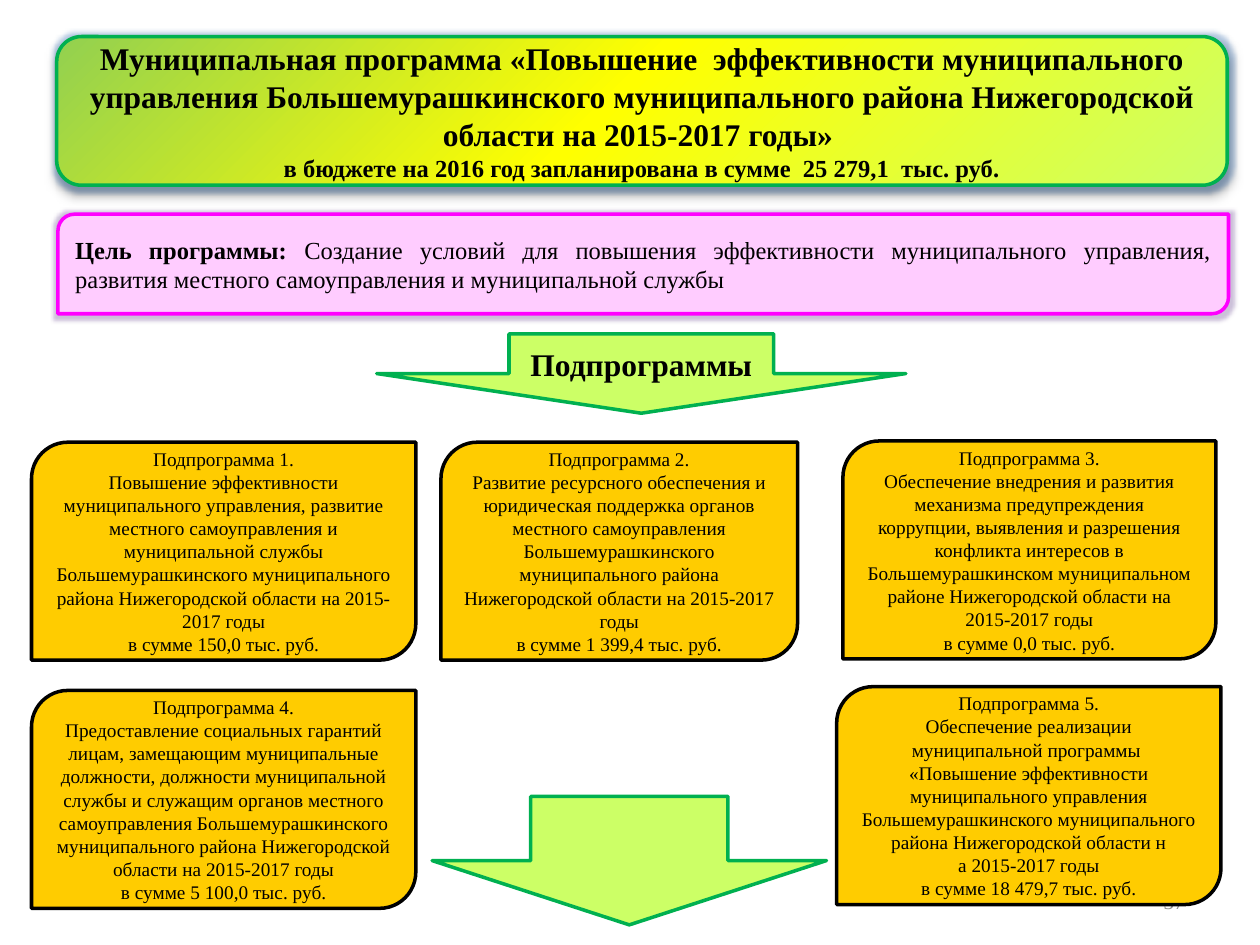
import copy
from dataclasses import dataclass

import pptx
import pptx.dml.color
import pptx.enum.shapes
import pptx.enum.text
import pptx.oxml
import pptx.oxml.ns
import pptx.util

Inches = pptx.util.Inches
Pt = pptx.util.Pt
Shape = pptx.enum.shapes.MSO_SHAPE
Align = pptx.enum.text.PP_ALIGN


@dataclass(frozen=True)
class Theme:
    font: str = "Times New Roman"
    ink: str = "000000"
    muted: str = "8C8C8C"
    green: str = "00B050"
    lime: str = "CCFF66"
    pink: str = "FFCCFF"
    magenta: str = "FF00FF"
    amber: str = "FFCC00"
    title_stops: tuple = (("CCFF66", 0), ("FFFF00", 0.53), ("92D050", 1))
    title_glow: str = "4F81BD"
    goal_glow: str = "8064A2"
    heading_size: int = 18
    body_size: int = 14
    number_size: int = 12
    card_size: int = 11
    border: int = 2


THEME = Theme()

SUBPROGRAMS = [
    ((0.25, 3.51, 3.05, 1.73), [
        "Подпрограмма 1.",
        "Повышение эффективности муниципального управления, развитие местного самоуправления и "
        "муниципальной службы Большемурашкинского муниципального района Нижегородской области "
        "на 2015-2017 годы",
        "в сумме 150,0 тыс. руб."]),
    ((3.5, 3.51, 2.83, 1.73), [
        "Подпрограмма 2.",
        "Развитие ресурсного обеспечения и юридическая поддержка органов местного самоуправления "
        "Большемурашкинского муниципального района Нижегородской области на 2015-2017 годы",
        "в сумме 1 399,4 тыс. руб."]),
    ((6.69, 3.5, 2.96, 1.73), [
        "Подпрограмма 3.",
        "Обеспечение внедрения и развития механизма предупреждения коррупции, выявления и "
        "разрешения конфликта интересов в Большемурашкинском муниципальном районе "
        "Нижегородской области на 2015-2017 годы",
        "в сумме 0,0 тыс. руб."]),
    ((0.25, 5.48, 3.05, 1.73), [
        "Подпрограмма 4.",
        "Предоставление социальных гарантий лицам, замещающим муниципальные должности, должности "
        "муниципальной службы и служащим органов местного самоуправления Большемурашкинского "
        "муниципального района Нижегородской области на 2015-2017 годы",
        "в сумме 5 100,0 тыс. руб."]),
    ((6.64, 5.45, 3.05, 1.73), [
        "Подпрограмма 5.",
        "Обеспечение реализации муниципальной программы  «Повышение эффективности муниципального "
        "управления Большемурашкинского муниципального района Нижегородской области н",
        "а 2015-2017 годы",
        "в сумме 18 479,7 тыс. руб."]),
]


def rgb(color):
    return pptx.dml.color.RGBColor.from_string(color)


def inches(box):
    return [Inches(length) for length in box]


def add_panel(slide, box, preset, fill, line):
    panel = slide.shapes.add_shape(preset, *inches(box))
    panel.shadow.inherit = False
    panel.fill.solid()
    panel.fill.fore_color.rgb = rgb(fill)
    panel.line.color.rgb = rgb(line)
    panel.line.width = Pt(THEME.border)
    return panel


def add_effect(panel, tag, color, alpha, **attributes):
    settings = " ".join(f'{key}="{value}"' for key, value in attributes.items())
    effect = pptx.oxml.parse_xml(
        f'<a:{tag} {pptx.oxml.ns.nsdecls("a")} {settings}>'
        f'<a:srgbClr val="{color}"><a:alpha val="{alpha * 1000}"/></a:srgbClr></a:{tag}>')
    panel._element.spPr.find(pptx.oxml.ns.qn("a:effectLst")).append(effect)


def write(shape, paragraphs, align=Align.CENTER, color=THEME.ink):
    frame = shape.text_frame
    frame.word_wrap = True
    frame.vertical_anchor = pptx.enum.text.MSO_ANCHOR.MIDDLE
    for index, (text, size, bold) in enumerate(paragraphs):
        paragraph = frame.add_paragraph() if index else frame.paragraphs[0]
        paragraph.text = text
        paragraph.alignment = align
        paragraph.font.name = THEME.font
        paragraph.font.size = Pt(size)
        paragraph.font.bold = bold
        paragraph.font.color.rgb = rgb(color)
    return frame


def add_page_number(slide, box):
    number = slide.shapes.add_textbox(*inches(box))
    write(number, [("37", THEME.number_size, False)], Align.RIGHT, THEME.muted)


def add_title(slide, box):
    title = add_panel(slide, box, Shape.ROUNDED_RECTANGLE, THEME.lime, THEME.green)
    title.fill.gradient()
    title.fill.gradient_angle = 135
    stop_list = next(title._element.spPr.iter(pptx.oxml.ns.qn("a:gsLst")))
    stop_list.append(copy.deepcopy(stop_list[0]))
    for stop, (color, position) in zip(title.fill.gradient_stops, THEME.title_stops):
        stop.color.rgb = rgb(color)
        stop.position = position
    add_effect(title, "glow", THEME.title_glow, 40, rad=Pt(5))
    add_effect(title, "outerShdw", THEME.ink, 40, blurRad=Pt(4), dist=Pt(3), dir=5400000)
    write(title, [
        ("Муниципальная программа «Повышение  эффективности муниципального управления "
         "Большемурашкинского муниципального района Нижегородской области на 2015-2017 годы» ",
         THEME.heading_size, True),
        ("в бюджете на 2016 год запланирована в сумме  25 279,1  тыс. руб.",
         THEME.body_size, True)])


def add_goal(slide, box):
    goal = add_panel(slide, box, Shape.ROUND_2_DIAG_RECTANGLE, THEME.pink, THEME.magenta)
    add_effect(goal, "glow", THEME.goal_glow, 40, rad=Pt(5))
    frame = write(goal, [("", THEME.body_size, False)], Align.JUSTIFY)
    label = frame.paragraphs[0].add_run()
    label.text = "Цель программы: "
    label.font.bold = True
    frame.paragraphs[0].add_run().text = (
        "Создание условий для повышения эффективности муниципального управления, "
        "развития местного самоуправления и муниципальной службы")


def add_arrow(slide, box, caption=None):
    arrow = add_panel(slide, box, Shape.DOWN_ARROW, THEME.lime, THEME.green)
    if caption:
        write(arrow, [(caption, THEME.heading_size, True)])


def add_subprogram(slide, box, lines):
    card = add_panel(slide, box, Shape.ROUND_2_DIAG_RECTANGLE, THEME.amber, THEME.ink)
    write(card, [(line, THEME.card_size, False) for line in lines])


def main():
    deck = pptx.Presentation()
    deck.slide_width = Inches(10)
    deck.slide_height = Inches(7.5)
    slide = deck.slides.add_slide(deck.slide_layouts[6])
    add_page_number(slide, (7.17, 6.95, 2.33, 0.4))
    add_title(slide, (0.45, 0.29, 9.29, 1.18))
    add_goal(slide, (0.46, 1.7, 9.29, 0.79))
    add_arrow(slide, (2.99, 2.65, 4.2, 0.63), "Подпрограммы")
    for box, lines in SUBPROGRAMS:
        add_subprogram(slide, box, lines)
    add_arrow(slide, (3.43, 6.32, 3.13, 1.02))
    deck.save("out.pptx")


if __name__ == "__main__":
    main()
